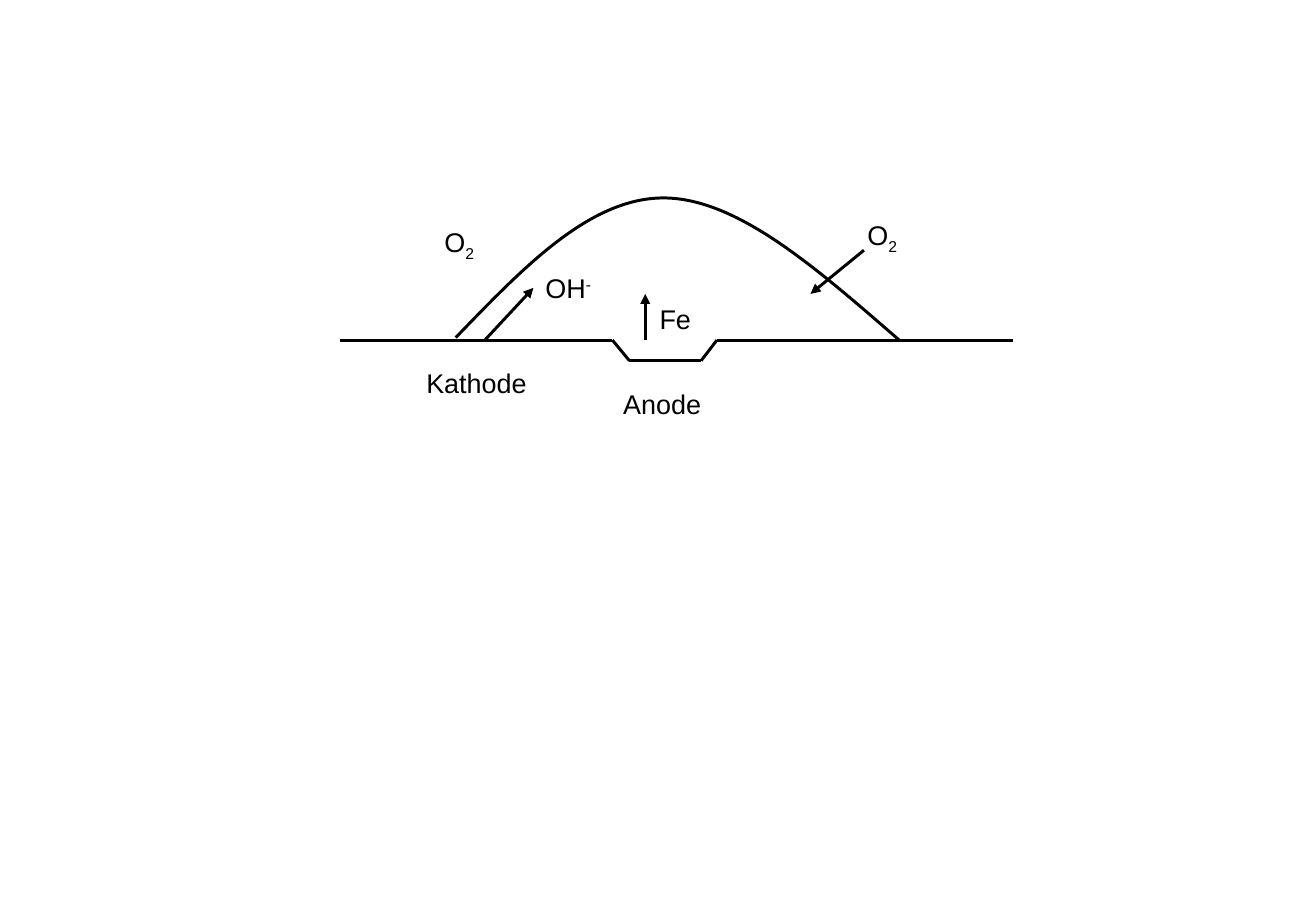
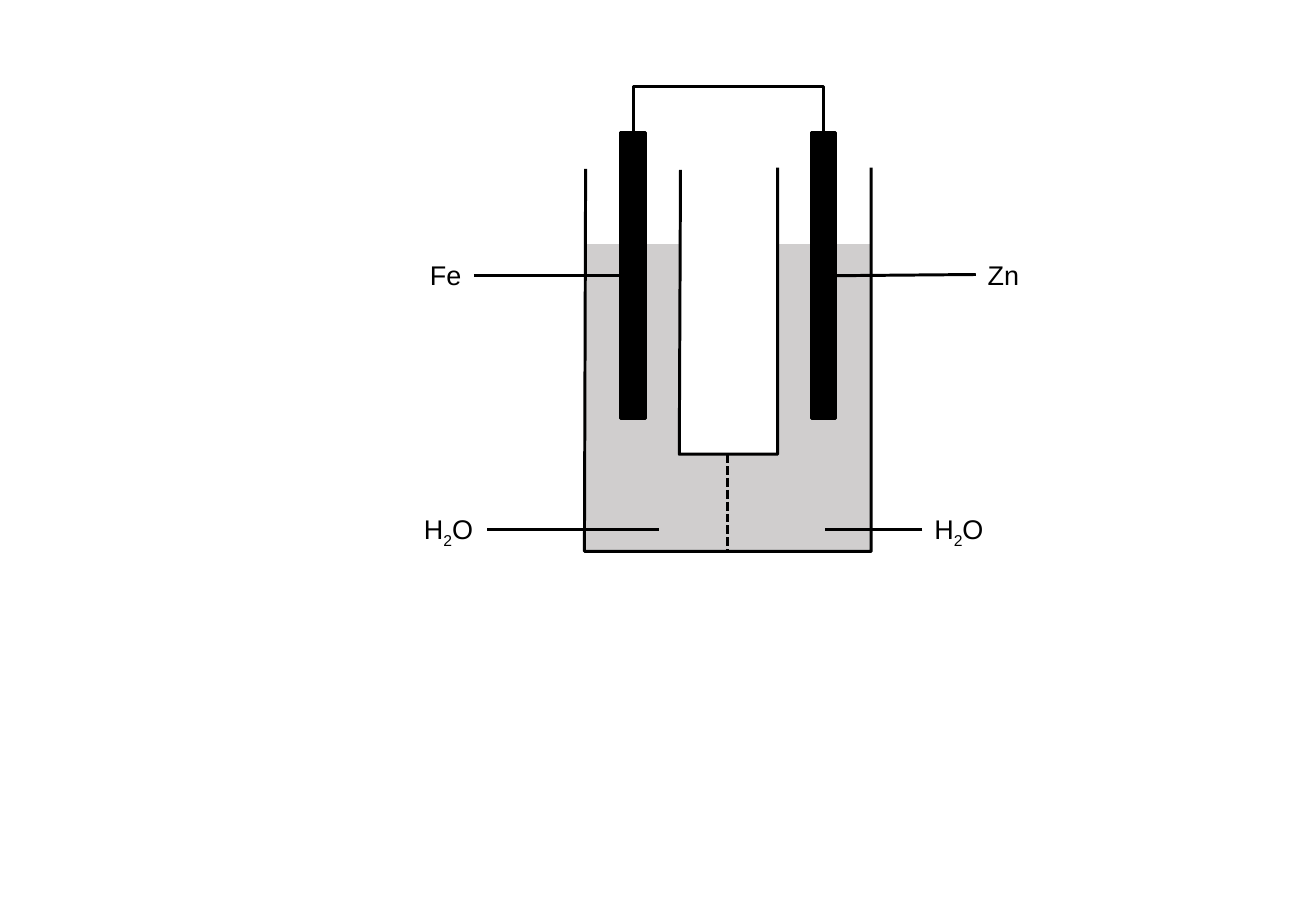
from dataclasses import dataclass

from lxml import etree
from pptx import Presentation
from pptx.dml.color import RGBColor
from pptx.enum.dml import MSO_LINE
from pptx.enum.shapes import MSO_CONNECTOR as Connector
from pptx.enum.shapes import MSO_SHAPE as Shape
from pptx.enum.text import MSO_AUTO_SIZE as AutoSize
from pptx.oxml.ns import qn
from pptx.util import Inches, Pt


@dataclass(frozen=True)
class Theme:
    ink: RGBColor = RGBColor(0x00, 0x00, 0x00)
    paper: RGBColor = RGBColor(0xFF, 0xFF, 0xFF)
    water: RGBColor = RGBColor(0xD0, 0xCE, 0xCE)
    font: str = "Arial"
    text_size: int = Pt(16)
    line_width: int = Pt(1.75)
    label_height: float = 0.37


THEME = Theme()
FRAME_FORMAT = {"word_wrap": False, "auto_size": AutoSize.SHAPE_TO_FIT_TEXT}
FONT_FORMAT = {"name": THEME.font, "size": THEME.text_size}
SUB, SUPER = -25000, 30000

# Labels: left, top, width, runs of (text, baseline shift)
OXYGEN = [("O", 0), ("2", SUB)]
WATER = [("H", 0), ("2", SUB), ("O", 0)]
DROP_LABELS = [
    (3.41, 2.97, 1.04, [("Kathode", 0)]),
    (5.03, 3.14, 0.85, [("Anode", 0)]),
    (4.39, 2.19, 0.59, [("OH", 0), ("-", SUPER)]),
    (5.33, 2.44, 0.46, [("Fe", 0)]),
    (3.56, 1.81, 0.46, OXYGEN),
    (7.04, 1.75, 0.46, OXYGEN),
]
CELL_LABELS = [
    (3.44, 2.08, 0.46, [("Fe", 0)]),
    (8.03, 2.08, 0.46, [("Zn", 0)]),
    (3.39, 4.17, 0.62, WATER),
    (7.59, 4.17, 0.62, WATER),
]

# Water drop on iron: metal surface with a pit, drop outline, ion arrows
SURFACE = [(2.8, 2.8), (5.04, 2.8), (5.18, 2.97), (5.77, 2.97), (5.9, 2.8), (8.34, 2.8)]
DROP_CURVE = [(3.75, 2.78), (4.3, 2.21), (4.85, 1.63), (5.46, 1.63),
              (6.07, 1.63), (6.73, 2.22), (7.4, 2.8)]
ION_ARROWS = [((3.99, 2.8), (4.39, 2.37)), ((5.31, 2.8), (5.31, 2.42)),
              ((7.11, 2.06), (6.67, 2.42))]

# Galvanic cell: U-shaped vessel, electrodes, wire, leader lines
VESSEL = [(7.17, 1.38), (7.17, 4.54), (4.81, 4.54), (4.82, 1.39)]
VESSEL_GAP = [(6.4, 1.38), (6.4, 3.74), (5.59, 3.74), (5.6, 1.4)]
WATER_LEVEL = 0.2
ELECTRODE_LEFTS = [5.11, 6.68]
ELECTRODE_TOP, ELECTRODE_WIDTH, ELECTRODE_HEIGHT = 1.09, 0.2, 2.36
WIRE_RISE, WIRE_STEP = 0.38, 0.01
MEMBRANE = ((5.99, 3.74), (5.99, 4.54))
LEADERS = [((3.9, 2.27), (5.11, 2.27)), ((8.03, 2.26), (6.88, 2.27)),
           ((4.01, 4.36), (5.42, 4.36)), ((7.59, 4.36), (6.79, 4.36))]


def style_line(shape):
    shape.line.color.rgb = THEME.ink
    shape.line.width = THEME.line_width


def add_line(slide, start, end, arrow=False, dash=None, kind=Connector.STRAIGHT):
    connector = slide.shapes.add_connector(kind, *map(Inches, (*start, *end)))
    style_line(connector)
    if dash:
        connector.line.dash_style = dash
    properties = connector._element.spPr
    if arrow:
        etree.SubElement(properties.find(qn("a:ln")), qn("a:tailEnd"), type="triangle")
    etree.SubElement(properties, qn("a:effectLst"))
    return connector


def add_outline(slide, points):
    start, *rest = [tuple(map(Inches, point)) for point in points]
    builder = slide.shapes.build_freeform(*start)
    builder.add_line_segments(rest, close=False)
    outline = builder.convert_to_shape()
    outline.shadow.inherit = False
    style_line(outline)
    return outline


def add_curve(slide, points):
    """Turn each three segments of an outline into one cubic Bézier."""
    curve = add_outline(slide, points)
    curve.fill.background()
    segments = list(curve._element.iter(qn("a:lnTo")))
    for first in range(0, len(segments), 3):
        bezier = etree.Element(qn("a:cubicBezTo"))
        segments[first].addprevious(bezier)
        for segment in segments[first:first + 3]:
            bezier.append(segment[0])
            segment.getparent().remove(segment)


def add_wire(slide, left, right, top):
    """Add an elbow connector, turned a quarter, that rises over both ends."""
    middle, half = (left + right) / 2, (right - left) / 2
    center_y = top - WIRE_STEP / 2
    wire = add_line(slide, (middle + WIRE_STEP / 2, center_y + half),
                    (middle - WIRE_STEP / 2, center_y - half), kind=Connector.ELBOW)
    properties = wire._element.spPr
    properties.find(qn("a:xfrm")).set("rot", "5400000")
    geometry = properties.find(qn("a:prstGeom"))
    guides = geometry.find(qn("a:avLst"))
    if guides is None:
        guides = etree.SubElement(geometry, qn("a:avLst"))
    bend = round(WIRE_RISE / WIRE_STEP * 100000)
    etree.SubElement(guides, qn("a:gd"), name="adj1", fmla=f"val {bend}")


def add_labels(slide, labels):
    for left, top, width, runs in labels:
        box = slide.shapes.add_textbox(*map(Inches, (left, top, width, THEME.label_height)))
        for name, value in FRAME_FORMAT.items():
            setattr(box.text_frame, name, value)
        paragraph = box.text_frame.paragraphs[0]
        for text, baseline in runs:
            run = paragraph.add_run()
            run.text = text
            for name, value in FONT_FORMAT.items():
                setattr(run.font, name, value)
            run.font.color.rgb = THEME.ink
            if baseline:
                run._r.get_or_add_rPr().set("baseline", str(baseline))


def build_drop(slide):
    for start, end in zip(SURFACE, SURFACE[1:]):
        add_line(slide, start, end)
    add_curve(slide, DROP_CURVE)
    for start, end in ION_ARROWS:
        add_line(slide, start, end, arrow=True)
    add_labels(slide, DROP_LABELS)


def build_cell(slide):
    # Vessel, filled up to the water level
    vessel = add_outline(slide, VESSEL)
    vessel.fill.gradient()
    vessel.fill.gradient_angle = 270
    for stop, color in zip(vessel.fill.gradient_stops, (THEME.paper, THEME.water)):
        stop.position = WATER_LEVEL
        stop.color.rgb = color
    gap = add_outline(slide, VESSEL_GAP)
    gap.fill.solid()
    gap.fill.fore_color.rgb = THEME.paper

    # Electrodes and the wire between them
    for left in ELECTRODE_LEFTS:
        electrode = slide.shapes.add_shape(Shape.RECTANGLE, *map(
            Inches, (left, ELECTRODE_TOP, ELECTRODE_WIDTH, ELECTRODE_HEIGHT)))
        electrode.shadow.inherit = False
        electrode.fill.solid()
        electrode.fill.fore_color.rgb = THEME.ink
        style_line(electrode)
    wire_ends = [left + ELECTRODE_WIDTH / 2 for left in ELECTRODE_LEFTS]
    add_wire(slide, *wire_ends, ELECTRODE_TOP)

    # Membrane and leader lines
    add_line(slide, *MEMBRANE, dash=MSO_LINE.SQUARE_DOT)
    for start, end in LEADERS:
        add_line(slide, start, end)
    add_labels(slide, CELL_LABELS)


def main():
    presentation = Presentation()
    presentation.slide_width = Inches(10.83)
    presentation.slide_height = Inches(7.5)
    blank_layout = presentation.slide_layouts[6]
    for build in (build_drop, build_cell):
        build(presentation.slides.add_slide(blank_layout))
    presentation.save("out.pptx")


if __name__ == "__main__":
    main()
